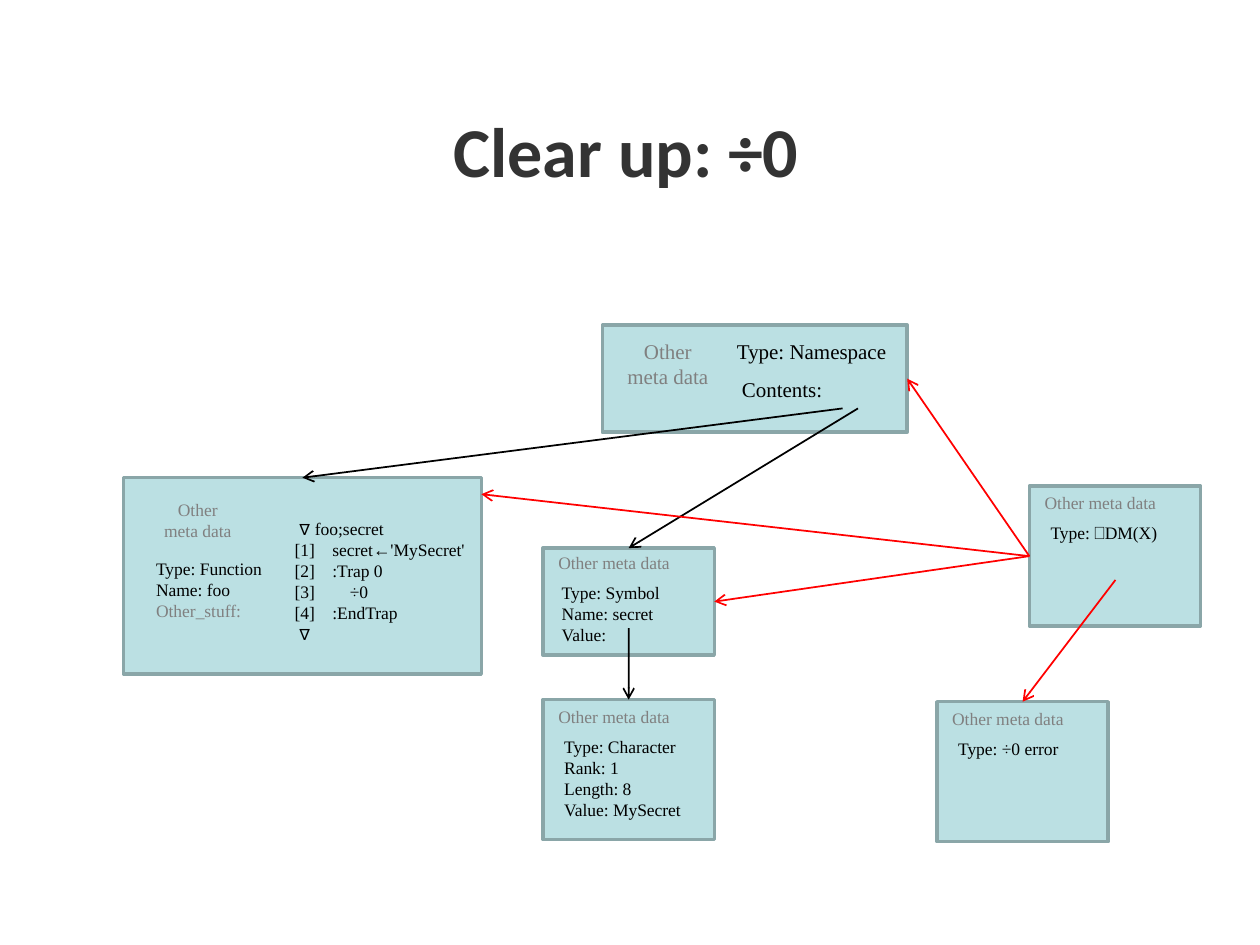
from lxml.etree import SubElement
from pptx import Presentation
from pptx.dml.color import RGBColor
from pptx.enum.shapes import MSO_CONNECTOR, MSO_SHAPE
from pptx.enum.text import MSO_ANCHOR, PP_ALIGN
from pptx.oxml.ns import qn
from pptx.util import Pt

BLACK = RGBColor(0x00, 0x00, 0x00)
RED = RGBColor(0xFF, 0x00, 0x00)
GRAY = RGBColor(0x80, 0x80, 0x80)
DARK = RGBColor(0x33, 0x33, 0x33)
TEAL = RGBColor(0xBB, 0xE0, 0xE3)
BORDER = RGBColor(0x8A, 0xA6, 0xA8)
TOP, LEFT, RIGHT = 0, 1, 3
META = "Other meta data"
CODE = [" ∇ foo;secret", "[1]    secret←'MySecret'", "[2]    :Trap 0",
        "[3]        ÷0", "[4]    :EndTrap", " ∇"]


def style(p, size, color, font="Times New Roman", bold=False):
    for r in p.runs:
        r.font.name, r.font.size, r.font.bold = font, Pt(size), bold
        r.font.color.rgb = color


def add_title(s, text, x, y, w, h):
    sp = s.shapes.title
    sp.left, sp.top, sp.width, sp.height = Pt(x), Pt(y), Pt(w), Pt(h)
    tf = sp.text_frame
    tf.text = text
    tf.vertical_anchor = MSO_ANCHOR.MIDDLE
    p = tf.paragraphs[0]
    p.alignment = PP_ALIGN.CENTER
    style(p, 40, DARK, "Calibri", True)


def add_box(s, x, y, w, h):
    sp = s.shapes.add_shape(MSO_SHAPE.RECTANGLE, Pt(x), Pt(y), Pt(w), Pt(h))
    sp.shadow.inherit = False
    sp.fill.solid()
    sp.fill.fore_color.rgb = TEAL
    sp.line.color.rgb = BORDER
    sp.line.width = Pt(2)
    return sp


def add_text(s, x, y, w, lines, size=10, color=BLACK, align=PP_ALIGN.LEFT):
    h = 7.2 + 1.2 * size * len(lines)
    tf = s.shapes.add_textbox(Pt(x), Pt(y), Pt(w), Pt(h)).text_frame
    tf.word_wrap = True
    tf.text = "\n".join(lines)
    for p in tf.paragraphs:
        p.alignment = align
        style(p, size, color)
    return tf


def add_meta(s, x, y, w, lines, size=10):
    add_text(s, x, y, w, lines, size, GRAY, PP_ALIGN.CENTER)


def add_namespace(s, x, y, w, h):
    sp = add_box(s, x, y, w, h)
    add_meta(s, x - 1, y + 4.3, 77, ["Other", "meta data"], 12)
    add_text(s, x + 69.8, y + 4.3, 104.4, ["Type: Namespace"], 12)
    add_text(s, x + 72.7, y + 25.9, 100.8, ["Contents:"], 12)
    return sp


def add_function(s, x, y, w, h):
    sp = add_box(s, x, y, w, h)
    add_meta(s, x + 5, y + 8.6, 74.9, ["Other", "meta data"])
    tf = add_text(s, x + 11.5, y + 42.5, 75.6,
                  ["Type: Function", "Name: foo", "Other_stuff:"])
    style(tf.paragraphs[-1], 10, GRAY)
    add_text(s, x + 90.7, y + 19.4, 118.8, CODE)
    return sp


def add_card(s, x, y, h, lines, body_left=5, lift=0):
    """Small box with a gray heading; lift raises its text."""
    sp = add_box(s, x, y, 97.9, h)
    add_meta(s, x - 2, y - lift, 85, [META])
    add_text(s, x + body_left, y + 17 - lift, 85, lines)
    return sp


def add_arrow(s, color, start, end):
    """Each end is either an (x, y) point or a (shape, side) pair."""
    c = s.shapes.add_connector(MSO_CONNECTOR.STRAIGHT, Pt(0), Pt(0), Pt(0), Pt(0))
    if isinstance(start[0], (int, float)):
        c.begin_x, c.begin_y = Pt(start[0]), Pt(start[1])
    else:
        c.begin_connect(*start)
    if isinstance(end[0], (int, float)):
        c.end_x, c.end_y = Pt(end[0]), Pt(end[1])
    else:
        c.end_connect(*end)
    c.line.color.rgb = color
    c.line.width = Pt(1)
    SubElement(c.line._get_or_add_ln(), qn("a:tailEnd"), type="arrow")
    SubElement(c._element.spPr, qn("a:effectLst"))


def main():
    prs = Presentation()
    prs.slide_width, prs.slide_height = Pt(720), Pt(540)
    s = prs.slides.add_slide(prs.slide_layouts[5])
    add_title(s, "Clear up: ÷0", 33.8, 54.7, 648, 62)

    function = add_function(s, 70.6, 273, 204.5, 112.3)
    namespace = add_namespace(s, 344.2, 185.8, 174.2, 61.2)
    symbol = add_card(s, 310.3, 313.2, 61.2,
                      ["Type: Symbol", "Name: secret", "Value:"], 3.6, 1.3)
    character = add_card(s, 310.3, 399.8, 79.9,
                         ["Type: Character", "Rank: 1", "Length: 8",
                          "Value: MySecret"])
    dm = add_card(s, 588.2, 277.8, 79.9 + 0.1, ["Type: ⎕DM(X)"])
    error = add_card(s, 535.4, 401, 80, ["Type: ÷0 error"])

    for color, start, end in [
        (BLACK, (481.5, 233.4), (function, TOP)),
        (BLACK, (490.3, 233.4), (symbol, TOP)),
        (BLACK, (359.3, 359), (character, TOP)),
        (RED, (dm, LEFT), (namespace, RIGHT)),
        (RED, (dm, LEFT), (275.1, 282.4)),
        (RED, (dm, LEFT), (symbol, RIGHT)),
        (RED, (637.4, 331.4), (error, TOP)),
    ]:
        add_arrow(s, color, start, end)
    prs.save("out.pptx")


if __name__ == "__main__":
    main()
